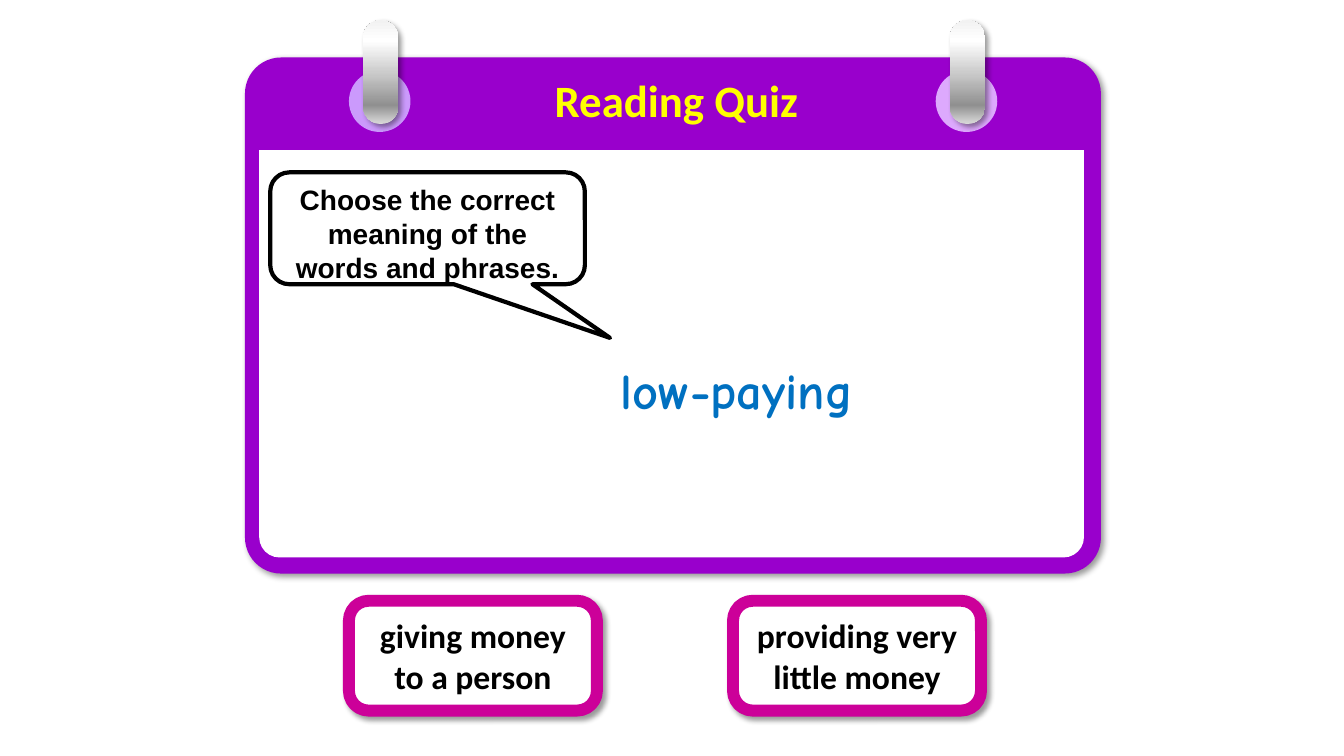
from dataclasses import dataclass

from lxml import etree
from pptx import Presentation
from pptx.dml.color import RGBColor
from pptx.enum.shapes import MSO_SHAPE
from pptx.enum.text import MSO_ANCHOR, MSO_AUTO_SIZE, PP_ALIGN
from pptx.oxml.ns import qn
from pptx.util import Inches, Pt

ROUND = MSO_SHAPE.ROUNDED_RECTANGLE
SHEET = MSO_SHAPE.ROUND_2_SAME_RECTANGLE
BUBBLE = MSO_SHAPE.ROUNDED_RECTANGULAR_CALLOUT
OVAL = MSO_SHAPE.OVAL
TOP, MIDDLE = MSO_ANCHOR.TOP, MSO_ANCHOR.MIDDLE
LEFT, CENTER = PP_ALIGN.LEFT, PP_ALIGN.CENTER
GROW = MSO_AUTO_SIZE.SHAPE_TO_FIT_TEXT
TITLE_ONLY = 5
WIDE, HIGH = Inches(13.33), Inches(7.5)


@dataclass(frozen=True)
class Theme:
    paper: str = "FFFFFF"
    ink: str = "000000"
    panel: str = "9900CC"
    frame: str = "CC0099"
    title: str = "FFFF00"
    word: str = "0070C0"
    holes: tuple = ("CB9AFC", "DDA9FD")
    metal: tuple = ((0, "D9D9D9"), (18, "909090"), (50, "CCCCCC"),
                    (80, "FFFFFF"), (100, "F2F2F2"))
    sans: str = "Calibri"
    plain: str = "Arial"
    hand: str = "Comic Neue"
    small: int = 20
    body: int = 24
    head: int = 32
    large: int = 36


THEME = Theme()


def place(x, y, w, h):
    """Turn percentages of the slide's size into lengths."""
    return [int(share * side / 100)
            for share, side in zip((x, y, w, h), (WIDE, HIGH, WIDE, HIGH))]


def node(parent, tag, **attrs):
    """Add a DrawingML element with the given attributes."""
    return etree.SubElement(parent, qn("a:" + tag),
                            {key: str(val) for key, val in attrs.items()})


def shade(shape):
    """Give a shape the soft shadow down to the right."""
    effects = shape.element.spPr.find(qn("a:effectLst"))
    outer = node(effects, "outerShdw", blurRad=Pt(4), dist=Pt(3),
                 dir=45 * 60000, algn="tl", rotWithShape=0)
    node(node(outer, "srgbClr", val=THEME.ink), "alpha", val=40000)


def polish(shape):
    """Fill a shape with the metal gradient."""
    shape.fill.gradient()
    stops = shape.element.spPr.find(qn("a:gradFill")).find(qn("a:gsLst"))
    for stop in list(stops):
        stops.remove(stop)
    for share, tone in THEME.metal:
        node(node(stops, "gs", pos=share * 1000), "srgbClr", val=tone)
    shape.fill.gradient_angle = 0


def draw(slide, kind, box, fill, adjust=(), line=None, width=0, turn=0):
    """Add a preset shape with a plain fill and an optional outline."""
    shape = slide.shapes.add_shape(kind, *place(*box))
    shape.shadow.inherit = False
    shape.rotation = turn
    for index, value in enumerate(adjust):
        shape.adjustments[index] = value
    shape.fill.solid()
    shape.fill.fore_color.rgb = RGBColor.from_string(fill)
    if line:
        shape.line.color.rgb = RGBColor.from_string(line)
        shape.line.width = Pt(width)
    else:
        shape.line.fill.background()
    return shape


def write(shape, text, font, size, tone, align=CENTER, anchor=TOP):
    """Write one bold run into a shape."""
    frame = shape.text_frame
    frame.word_wrap = True
    frame.vertical_anchor = anchor
    para = frame.paragraphs[0]
    para.alignment = align
    run = para.add_run()
    run.text = text
    run.font.name, run.font.size, run.font.bold = font, Pt(size), True
    run.font.color.rgb = RGBColor.from_string(tone)


def answer(slide, x, text):
    """Add a framed answer card."""
    card = draw(slide, ROUND, (x, 79.47, 18.45, 14.53), THEME.paper,
                [0.18], THEME.frame, 8.5)
    shade(card)
    write(card, text, THEME.sans, THEME.body, THEME.ink, anchor=MIDDLE)


def ring(slide, x, tone):
    """Add a binder hole with its metal ring."""
    draw(slide, OVAL, (x, 9.33, 4.58, 8.13), tone)
    clip = draw(slide, ROUND, (x - 1.5, 7.2, 7.73, 4.67), THEME.paper,
                [0.5], turn=270)
    polish(clip)
    shade(clip)


def heading(slide, text):
    """Place the title in front of the panel."""
    title = slide.shapes.title
    title.left, title.top, title.width, title.height = place(
        32.33, 8.93, 36.01, 8.53)
    slide.shapes.element.append(title.element)
    write(title, text, THEME.sans, THEME.head, THEME.title)
    title.text_frame.auto_size = GROW


def main():
    """Build the quiz slide."""
    deck = Presentation()
    deck.slide_width, deck.slide_height = WIDE, HIGH
    slide = deck.slides.add_slide(deck.slide_layouts[TITLE_ONLY])

    answer(slide, 54.54, "providing very little money")
    answer(slide, 25.96, "giving money to a person")

    shade(draw(slide, ROUND, (18.23, 7.6, 63.69, 68.27), THEME.panel, [0.07]))
    draw(slide, SHEET, (19.28, 19.87, 61.37, 53.87), THEME.paper,
         [0.05, 0], turn=180)
    bubble = draw(slide, BUBBLE, (20.11, 22.8, 23.41, 14.8), THEME.paper,
                  [0.58, 0.98, 0.17], THEME.ink, 3)
    write(bubble, "Choose the correct meaning of the words and phrases.",
          THEME.plain, THEME.small, THEME.ink)

    heading(slide, "Reading Quiz")
    for x, tone in zip((25.96, 69.62), THEME.holes):
        ring(slide, x, tone)

    word = slide.shapes.add_textbox(*place(45.46, 46.8, 26.86, 9.47))
    write(word, "low-paying", THEME.hand, THEME.large, THEME.word, LEFT)
    word.text_frame.auto_size = GROW
    deck.save("out.pptx")


if __name__ == "__main__":
    main()
